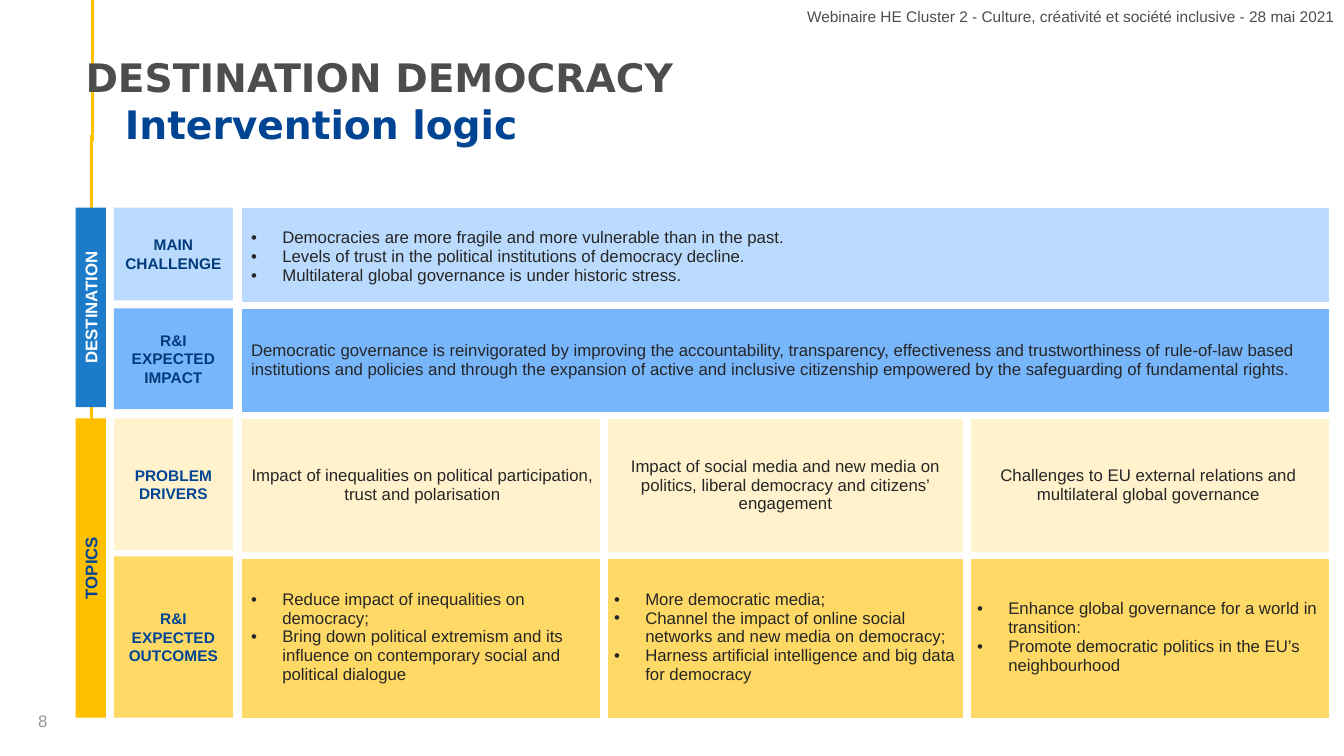
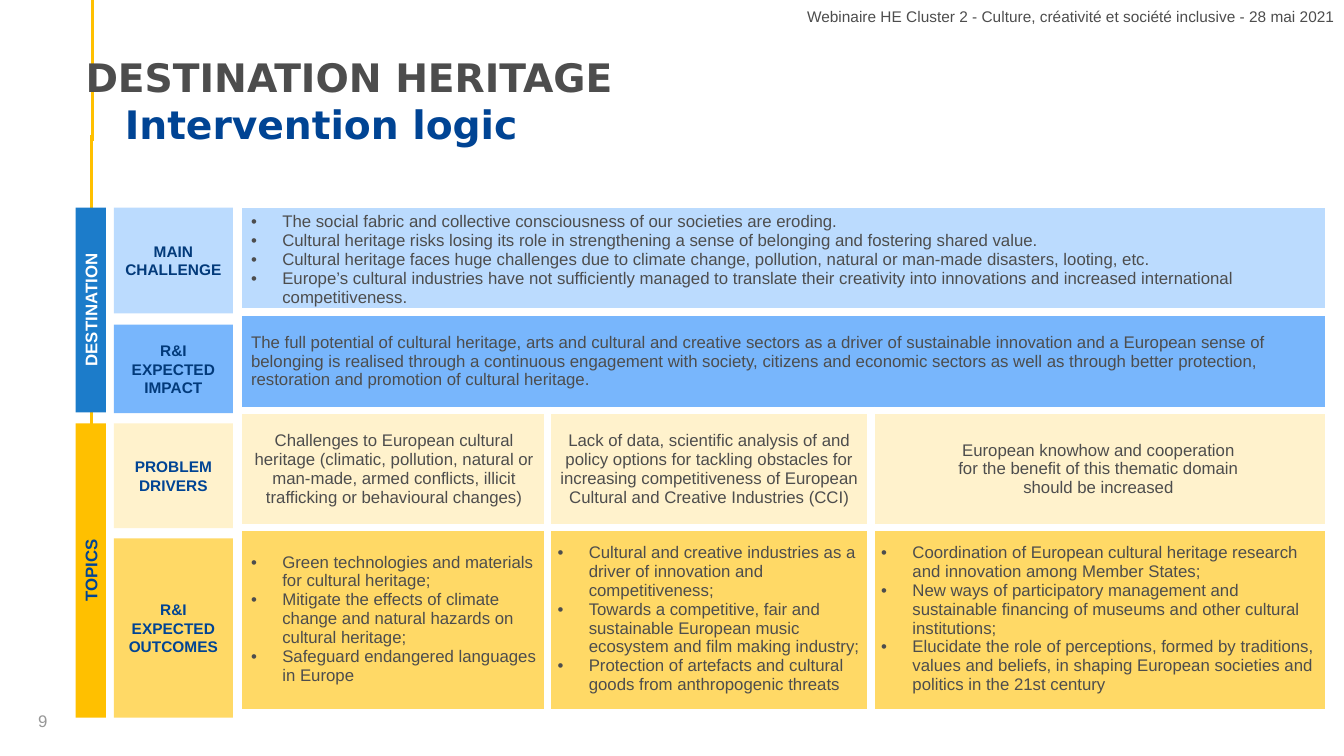
from copy import deepcopy
from lxml.etree import SubElement
from pptx import Presentation
from pptx.dml.color import RGBColor
from pptx.enum.shapes import MSO_CONNECTOR as CONNECTOR, MSO_SHAPE as SHAPE
from pptx.enum.text import MSO_ANCHOR as ANCHOR, PP_ALIGN as ALIGN
from pptx.oxml.ns import qn
from pptx.util import Inches, Pt

color = RGBColor.from_string
WHITE, GREY, NAVY, DEEP_BLUE, GOLD = "FFFFFF", "4D4D4D", "004494", "023A7A", "FFC000"
EVENT = "Webinaire HE Cluster 2 - Culture, créativité et société inclusive - 28 mai 2021"
BOTTOM = 7.12

ROWS = [
    {"label": "MAIN CHALLENGE", "fill": "BBDBFE", "ink": DEEP_BLUE, "align": ALIGN.LEFT, "bullet": True},
    {"label": "R&I EXPECTED IMPACT", "fill": "78B6FC", "ink": DEEP_BLUE, "align": ALIGN.LEFT, "bullet": False},
    {"label": "PROBLEM DRIVERS", "fill": "FFF2CC", "ink": NAVY, "align": ALIGN.CENTER, "bullet": False},
    {"label": "R&I EXPECTED OUTCOMES", "fill": "FFD966", "ink": NAVY, "align": ALIGN.LEFT, "bullet": True},
]

SLIDES = [
    {
        "number": "8",
        "title": "DESTINATION DEMOCRACY",
        "ink": "262626",
        "columns": [3.6, 3.6, 3.6],
        "heights": [0.97, 1.09, 1.39, 1.62],
        "labels": [(2.06, 0.92), (3.06, 1), (4.15, 1.31), (5.52, 1.6)],
        "cells": [
            [["Democracies are more fragile and more vulnerable than in the past.",
              "Levels of trust in the political institutions of democracy decline.",
              "Multilateral global governance is under historic stress."]],
            [["Democratic governance is reinvigorated by improving the accountability, transparency, "
              "effectiveness and trustworthiness of rule-of-law based institutions and policies and through "
              "the expansion of active and inclusive citizenship empowered by the safeguarding of "
              "fundamental rights."]],
            [["Impact of inequalities on political participation, trust and polarisation"],
             ["Impact of social media and new media on politics, liberal democracy and citizens’ engagement"],
             ["Challenges to EU external relations and multilateral global governance"]],
            [["Reduce impact of inequalities on democracy;",
              "Bring down political extremism and its influence on contemporary social and political dialogue"],
             ["More democratic media;",
              "Channel the impact of online social networks and new media on democracy;",
              "Harness artificial intelligence and big data for democracy"],
             ["Enhance global governance for a world in transition:",
              "Promote democratic politics in the EU’s neighbourhood"]],
        ],
    },
    {
        "number": "9",
        "title": "DESTINATION HERITAGE",
        "ink": GREY,
        "columns": [3.04, 3.21, 4.51],
        "heights": [1, 0.98, 1.16, 1.81],
        "labels": [(2.06, 1.05), (3.22, 0.88), (4.2, 1.04), (5.34, 1.78)],
        "cells": [
            [["The social fabric and collective consciousness of our societies are eroding.",
              "Cultural heritage risks losing its role in strengthening a sense of belonging and fostering "
              "shared value.",
              "Cultural heritage faces huge challenges due to climate change, pollution, natural or man-made "
              "disasters, looting, etc.",
              "Europe’s cultural industries have not sufficiently managed to translate their creativity into "
              "innovations and increased international competitiveness."]],
            [["The full potential of cultural heritage, arts and cultural and creative sectors as a driver of "
              "sustainable innovation and a European sense of belonging is realised through a continuous "
              "engagement with society, citizens and economic sectors as well as through better protection, "
              "restoration and promotion of cultural heritage."]],
            [["Challenges to European cultural heritage (climatic, pollution, natural or man-made, armed "
              "conflicts, illicit trafficking or behavioural changes)"],
             ["Lack of data, scientific analysis of and policy options for tackling obstacles for increasing "
              "competitiveness of European Cultural and Creative Industries (CCI)"],
             ["European knowhow and cooperation\vfor the benefit of this thematic domain\vshould be increased"]],
            [["Green technologies and materials for cultural heritage;",
              "Mitigate the effects of climate change and natural hazards on cultural heritage;",
              "Safeguard endangered languages in Europe"],
             ["Cultural and creative industries as a driver of innovation and competitiveness;",
              "Towards a competitive, fair and sustainable European music ecosystem and film making industry;",
              "Protection of artefacts and cultural goods from anthropogenic threats"],
             ["Coordination of European cultural heritage research and innovation among Member States;",
              "New ways of participatory management and sustainable financing of museums and other cultural "
              "institutions;",
              "Elucidate the role of perceptions, formed by traditions, values and beliefs, in shaping "
              "European societies and politics in the 21st century"]],
        ],
    },
]


def write(frame, lines, size, inks, align=ALIGN.LEFT, bold=False, font="Arial", indent=0, bullet=False):
    frame.word_wrap = True
    for index, line in enumerate(lines):
        paragraph = frame.paragraphs[0] if index == 0 else frame.add_paragraph()
        paragraph.text = line
        paragraph.alignment = align
        if indent:
            properties = paragraph._p.get_or_add_pPr()
            properties.set("marL", str(Inches(indent)))
            properties.set("indent", str(-Inches(indent)))
            if bullet:
                SubElement(properties, qn("a:buFont")).set("typeface", "Arial")
                SubElement(properties, qn("a:buChar")).set("char", "•")
        for position, run in enumerate(paragraph.runs):
            for name, value in {"size": Pt(size), "bold": bold, "name": font}.items():
                setattr(run.font, name, value)
            run.font.color.rgb = color(inks[min(position, len(inks) - 1)])
        for line_break in paragraph._p.findall(qn("a:br")):
            line_break.insert(0, deepcopy(paragraph.runs[0]._r.rPr))


def add_panel(slide, left, top, width, height, fill, text, size, ink, rotation=0):
    panel = slide.shapes.add_shape(SHAPE.RECTANGLE, Inches(left), Inches(top), Inches(width), Inches(height))
    panel.shadow.inherit = False
    panel.rotation = rotation
    panel.fill.solid()
    panel.fill.fore_color.rgb = color(fill)
    panel.line.fill.background()
    frame = panel.text_frame
    frame.vertical_anchor = ANCHOR.MIDDLE
    frame.margin_left = frame.margin_right = Inches(0.05)
    write(frame, [text], size, [ink], ALIGN.CENTER, True)


presentation = Presentation()
presentation.slide_width = Inches(13.33)
presentation.slide_height = Inches(7.5)

for content in SLIDES:
    slide = presentation.slides.add_slide(presentation.slide_layouts[6])

    for x, top, bottom in [(0.92, 0, 1.4), (0.91, 1.34, 5.36)]:
        rule = slide.shapes.add_connector(CONNECTOR.STRAIGHT, Inches(x), Inches(top), Inches(x), Inches(bottom))
        rule.line.color.rgb = color(GOLD)
        rule.line.width = Pt(2.25)
        SubElement(rule._element.spPr, qn("a:effectLst"))

    columns, heights = content["columns"], content["heights"]
    table = slide.shapes.add_table(len(ROWS), len(columns), Inches(2.39), Inches(2.06),
                                   Inches(sum(columns)), Inches(sum(heights))).table
    table.first_row = table.horz_banding = False
    for index, width in enumerate(columns):
        table.columns[index].width = Inches(width)

    for row_index, row in enumerate(ROWS):
        table.rows[row_index].height = Inches(heights[row_index])
        texts = content["cells"][row_index]
        split = len(texts) > 1
        if not split:
            table.cell(row_index, 0).merge(table.cell(row_index, len(columns) - 1))
        for column_index in range(len(columns)):
            cell = table.cell(row_index, column_index)
            edges = {
                "a:lnL": split and column_index > 0,
                "a:lnR": split and column_index < len(columns) - 1,
                "a:lnT": row_index > 0,
                "a:lnB": row_index < len(ROWS) - 1,
            }
            for edge, visible in edges.items():
                if visible:
                    border = SubElement(cell._tc.get_or_add_tcPr(), qn(edge), w=str(Pt(6)))
                    SubElement(SubElement(border, qn("a:solidFill")), qn("a:srgbClr"), val=WHITE)
            cell.fill.solid()
            cell.fill.fore_color.rgb = color(row["fill"])
            cell.vertical_anchor = ANCHOR.MIDDLE
            if column_index < len(texts):
                write(cell.text_frame, texts[column_index], 12, [content["ink"]], row["align"],
                      indent=0.31 if row["bullet"] else 0, bullet=row["bullet"])

    labels = content["labels"]
    for row, (top, height) in zip(ROWS, labels):
        add_panel(slide, 1.13, top, 1.18, height, row["fill"], row["label"], 11, row["ink"])

    topics_top = labels[2][0]
    for text, top, bottom, fill, ink in [
        ("DESTINATION", labels[0][0], topics_top - 0.11, "1C7CCA", WHITE),
        ("TOPICS", topics_top, BOTTOM, GOLD, NAVY),
    ]:
        length, thickness = bottom - top, 0.3
        add_panel(slide, 0.9 - length / 2, (top + bottom - thickness) / 2, length, thickness,
                  fill, text, 12, ink, 270)

    for left, top, width, height, text, style in [
        (0.28, 7, 3, 0.4, content["number"], {"size": 12, "inks": ["979797"]}),
        (0.75, 0.48, 8.44, 1.04, content["title"] + "\vIntervention logic",
         {"size": 28, "inks": [GREY, NAVY], "bold": True, "font": "DejaVu Sans", "indent": 0.39}),
        (7.85, 0.02, 5.49, 0.33, EVENT, {"size": 11, "inks": [GREY], "align": ALIGN.RIGHT}),
    ]:
        box = slide.shapes.add_textbox(Inches(left), Inches(top), Inches(width), Inches(height))
        write(box.text_frame, [text], **style)

presentation.save("out.pptx")
